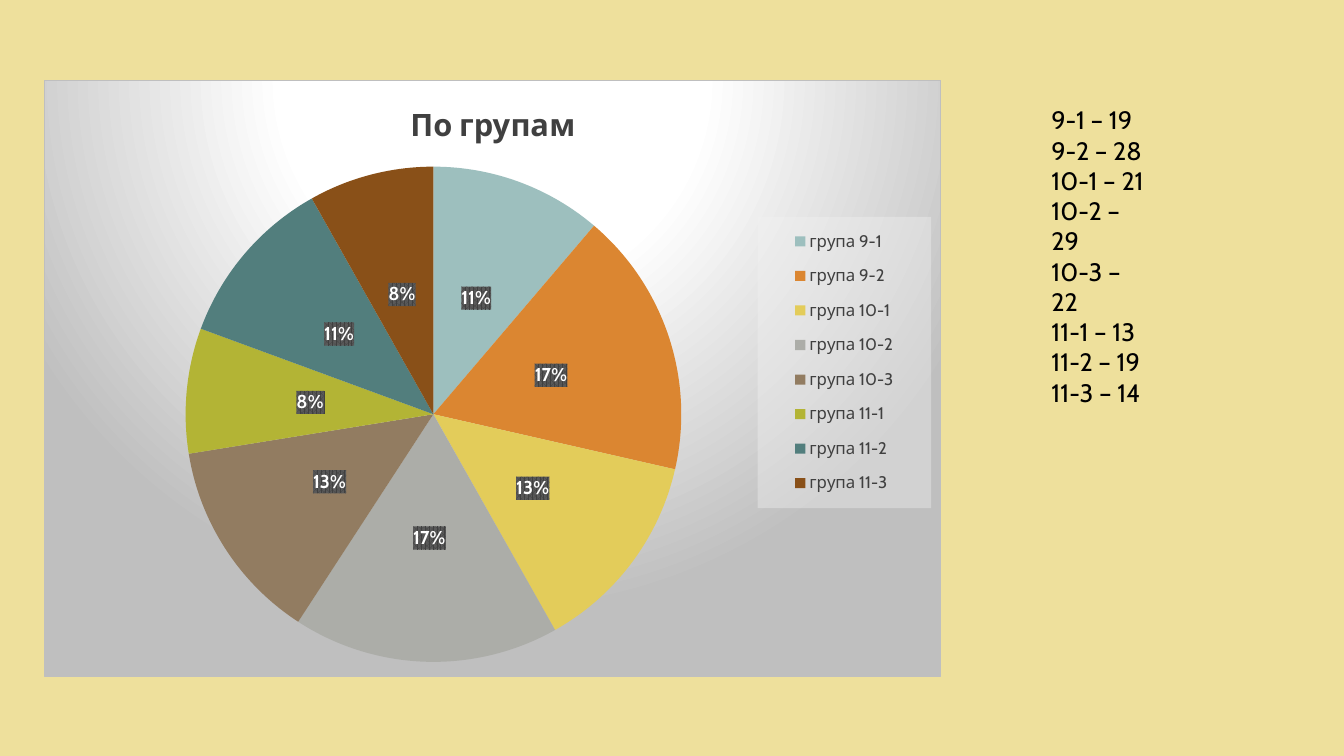
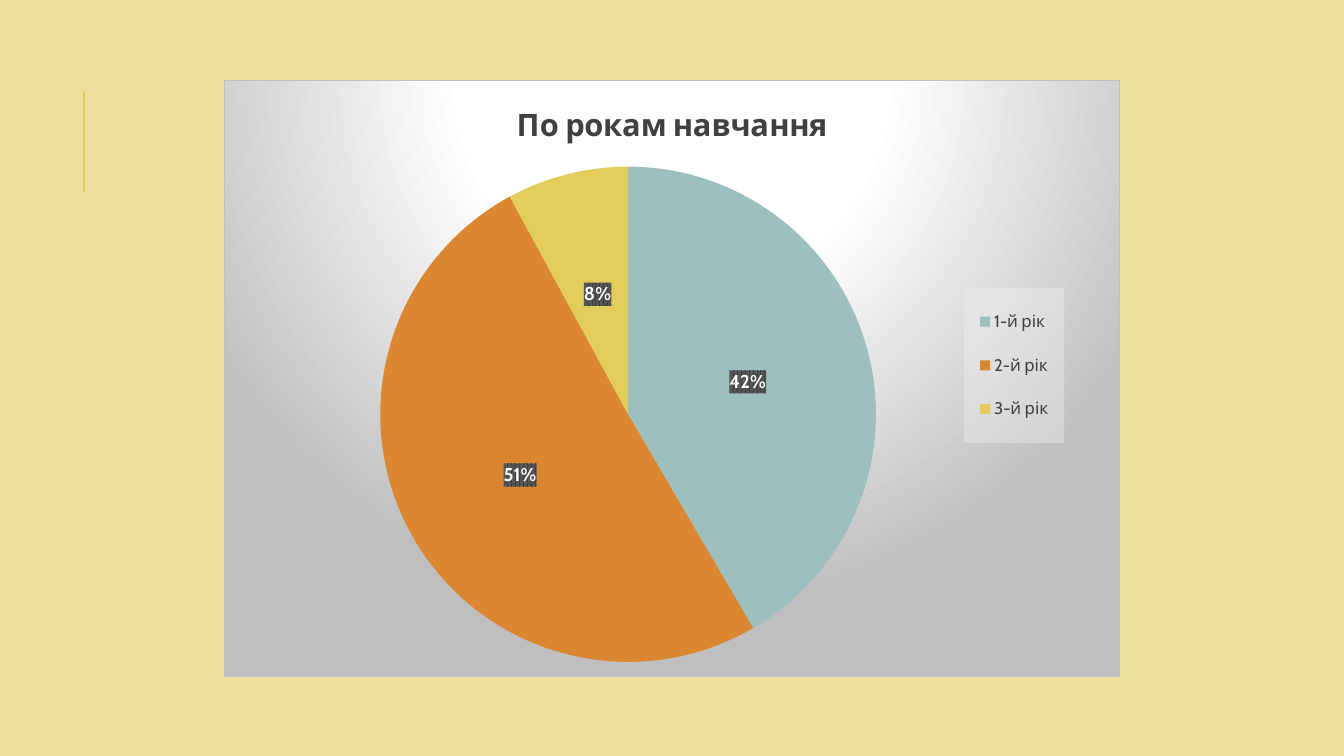
from dataclasses import dataclass

from lxml import etree
from pptx import Presentation
from pptx.chart.data import CategoryChartData
from pptx.dml.color import RGBColor
from pptx.enum.chart import XL_CHART_TYPE as ChartType
from pptx.enum.chart import XL_LABEL_POSITION as LabelPosition
from pptx.enum.chart import XL_LEGEND_POSITION as LegendPosition
from pptx.enum.shapes import MSO_CONNECTOR as ConnectorType
from pptx.enum.text import MSO_AUTO_SIZE as AutoSize
from pptx.oxml import parse_xml
from pptx.oxml.ns import nsdecls, qn
from pptx.util import Inches, Pt


@dataclass(frozen=True)
class Theme:
    font: str = "Cabin"
    background: str = "EEE09C"
    accent: str = "E3CC5A"
    text: str = "000000"
    chart_text: str = "404040"
    label_text: str = "FFFFFF"
    label_pattern: tuple = ("404040", "595959")
    legend_fill: str = "F2F2F2"
    panel_light: str = "FFFFFF"
    panel_dark: str = "BFBFBF"
    slices: tuple = ("9DBFBE", "DB8631", "E3CC5A", "ACADA8",
                     "927C61", "B3B435", "527E7D", "895018")
    chart_size: float = 10
    legend_size: float = 12
    label_size: float = 13.3
    title_size: float = 22
    body_size: float = 18


THEME = Theme()
CHART_TOP, CHART_WIDTH, CHART_HEIGHT = 0.79, 8.89, 5.93

GROUPS = {"група 9-1": 11, "група 9-2": 17, "група 10-1": 13, "група 10-2": 17,
          "група 10-3": 13, "група 11-1": 8, "група 11-2": 11, "група 11-3": 8}
YEARS = {"1-й рік": 42, "2-й рік": 51, "3-й рік": 8}
GROUP_COUNTS = ["9-1 – 19", "9-2 – 28", "10-1 – 21", "10-2 – 29",
                "10-3 – 22", "11-1 – 13", "11-2 – 19", "11-3 – 14"]


def style_font(font, size, color, bold=False):
    font.name = THEME.font
    font.size = Pt(size)
    font.bold = bold
    font.color.rgb = RGBColor.from_string(color)


def shape_properties(content):
    """Return a chart spPr element holding the given DrawingML."""
    return parse_xml(f'<c:spPr {nsdecls("c", "a")}>{content}</c:spPr>')


def solid(color, extra=""):
    return f'<a:solidFill><a:srgbClr val="{color}">{extra}</a:srgbClr></a:solidFill>'


def panel_properties():
    stops = "".join(
        f'<a:gs pos="{position}"><a:srgbClr val="{color}"/></a:gs>'
        for position, color in ((0, THEME.panel_light), (39000, THEME.panel_light),
                                (100000, THEME.panel_dark)))
    return shape_properties(
        f'<a:gradFill><a:gsLst>{stops}</a:gsLst><a:path path="circle">'
        '<a:fillToRect l="50000" t="-80000" r="50000" b="180000"/></a:path></a:gradFill>'
        f'<a:ln w="{Pt(0.75)}">{solid(THEME.panel_dark)}</a:ln>')


def label_properties():
    front, back = THEME.label_pattern
    return shape_properties(
        f'<a:pattFill prst="pct75"><a:fgClr><a:srgbClr val="{front}"/></a:fgClr>'
        f'<a:bgClr><a:srgbClr val="{back}"/></a:bgClr></a:pattFill><a:ln><a:noFill/></a:ln>')


def set_layout(parent, index, box, target=""):
    """Fix a chart part at left, top, width, height as fractions of the chart."""
    for layout in parent.findall(qn("c:layout")):
        parent.remove(layout)
    modes = '<c:xMode val="edge"/><c:yMode val="edge"/>'
    sizes = "".join(f'<c:{name} val="{value}"/>' for name, value in zip("xywh", box))
    parent.insert(index, parse_xml(
        f'<c:layout {nsdecls("c")}><c:manualLayout>{target}{modes}{sizes}'
        '</c:manualLayout></c:layout>'))


def add_pie_panel(slide, left, title, shares, plot_box, legend_box):
    data = CategoryChartData()
    data.categories = list(shares)
    data.add_series("Series 1", list(shares.values()))
    chart = slide.shapes.add_chart(
        ChartType.PIE, Inches(left), Inches(CHART_TOP),
        Inches(CHART_WIDTH), Inches(CHART_HEIGHT), data).chart
    style_font(chart.font, THEME.chart_size, THEME.text)
    root = chart.element
    root.find(qn("c:chart")).addnext(panel_properties())

    chart.has_title = True
    paragraph = chart.chart_title.text_frame.paragraphs[0]
    paragraph.text = title
    style_font(paragraph.runs[0].font, THEME.title_size, THEME.chart_text, bold=True)
    chart.chart_title.include_in_layout = False

    plot = chart.plots[0]
    plot.vary_by_categories = True
    for index, color in zip(range(len(shares)), THEME.slices):
        point_format = plot.series[0].points[index].format
        point_format.fill.solid()
        point_format.fill.fore_color.rgb = RGBColor.from_string(color)
        point_format.line.fill.background()
    set_layout(root.find(f".//{qn('c:plotArea')}"), 0, plot_box,
               '<c:layoutTarget val="inner"/>')

    plot.has_data_labels = True
    labels = plot.data_labels
    labels.show_value = True
    labels.number_format = '0"%"'
    labels.number_format_is_linked = False
    labels.position = LabelPosition.CENTER
    style_font(labels.font, THEME.label_size, THEME.label_text, bold=True)
    label_element = root.find(f".//{qn('c:dLbls')}")
    label_element.find(qn("c:txPr")).addprevious(label_properties())

    chart.has_legend = True
    chart.legend.position = LegendPosition.RIGHT
    chart.legend.include_in_layout = False
    style_font(chart.legend.font, THEME.legend_size, THEME.chart_text)
    legend_element = root.find(f".//{qn('c:legend')}")
    set_layout(legend_element, 1, legend_box)
    legend_element.find(qn("c:txPr")).addprevious(
        shape_properties(solid(THEME.legend_fill, '<a:alpha val="39000"/>')))


def add_count_list(slide, left, top, width, height, lines):
    text_frame = slide.shapes.add_textbox(
        Inches(left), Inches(top), Inches(width), Inches(height)).text_frame
    text_frame.word_wrap = True
    text_frame.auto_size = AutoSize.SHAPE_TO_FIT_TEXT
    text_frame.text = "\n".join(lines)
    for paragraph in text_frame.paragraphs:
        style_font(paragraph.runs[0].font, THEME.body_size, THEME.text)


def style_layout(presentation, layout, slide):
    """Give the master its background and the layout its accent line, drawn via a slide."""
    fill = presentation.slide_master.background.fill
    fill.solid()
    fill.fore_color.rgb = RGBColor.from_string(THEME.background)
    accent = slide.shapes.add_connector(
        ConnectorType.STRAIGHT, Inches(0.83), Inches(1.9), Inches(0.83), Inches(0.9))
    accent.line.color.rgb = RGBColor.from_string(THEME.accent)
    accent.line.width = Pt(1.5)
    etree.SubElement(accent.element.spPr, qn("a:effectLst"))
    layout.shapes.element.append(accent.element)


def build_group_slide(slide):
    add_pie_panel(slide, 0.44, "По групам", GROUPS,
                  plot_box=(0.157, 0.145, 0.554, 0.83),
                  legend_box=(0.796, 0.229, 0.194, 0.488))
    add_count_list(slide, 10.33, 0.99, 1.16, 2.83, GROUP_COUNTS)


def build_year_slide(slide):
    add_pie_panel(slide, 2.22, "По рокам навчання", YEARS,
                  plot_box=(0.174, 0.145, 0.554, 0.83),
                  legend_box=(0.826, 0.348, 0.112, 0.26))


def main():
    presentation = Presentation()
    presentation.slide_width = Inches(13.33)
    presentation.slide_height = Inches(7.5)
    blank = presentation.slide_layouts[6]
    group_slide, year_slide = (presentation.slides.add_slide(blank) for _ in range(2))
    style_layout(presentation, blank, group_slide)
    build_group_slide(group_slide)
    build_year_slide(year_slide)
    presentation.save("out.pptx")


if __name__ == "__main__":
    main()
